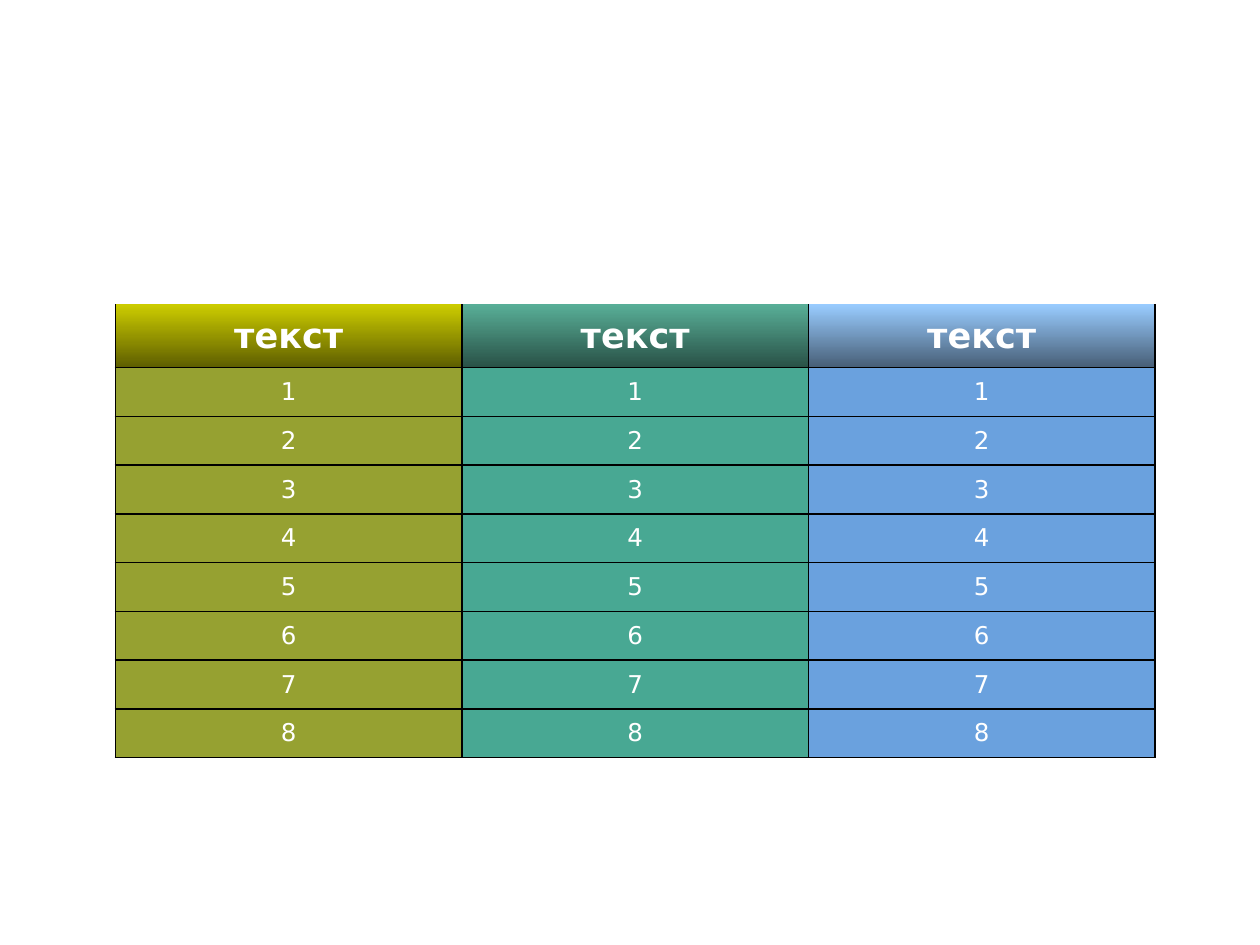
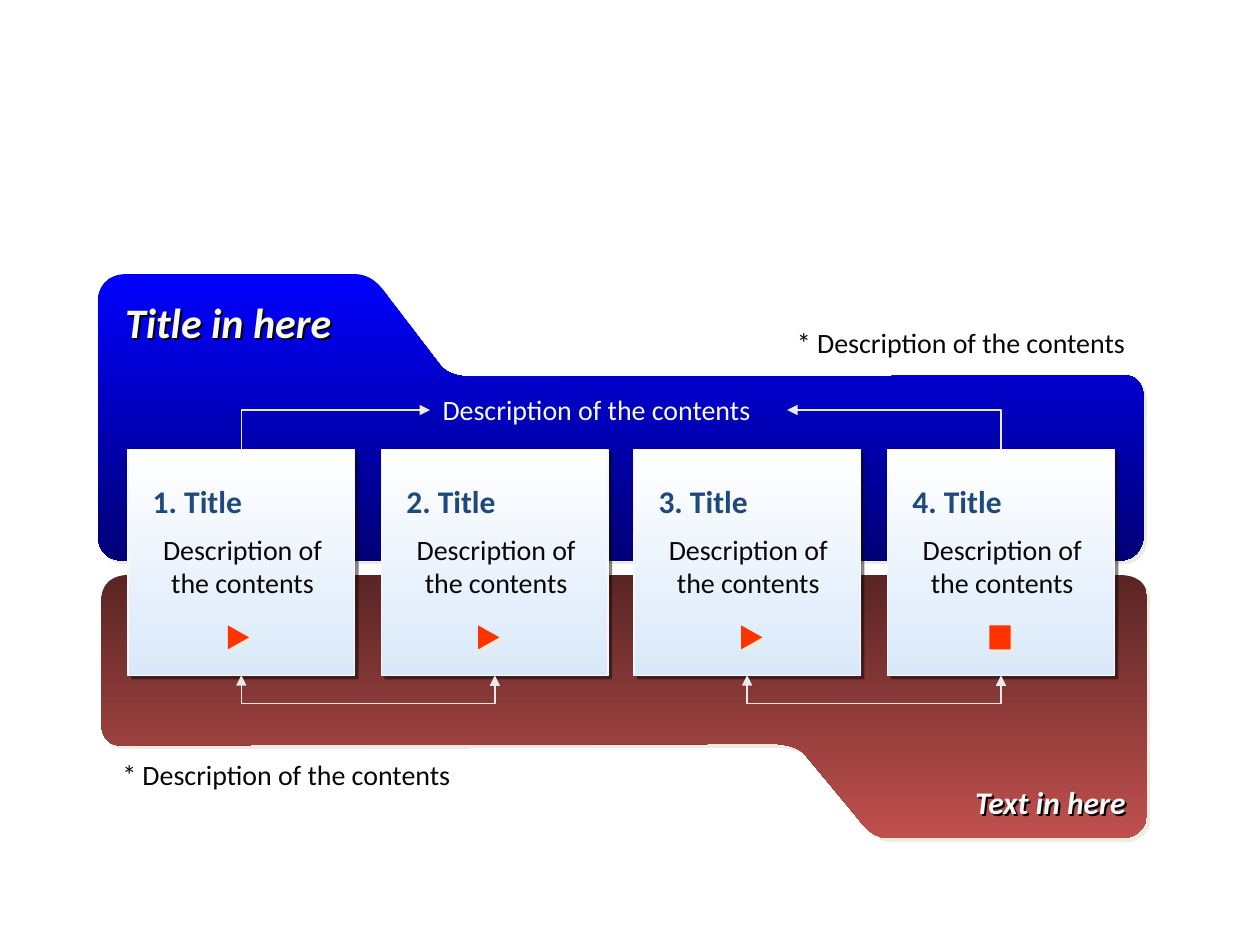
from dataclasses import dataclass

from lxml.etree import SubElement
from pptx import Presentation
from pptx.dml.color import RGBColor
from pptx.enum.shapes import MSO_CONNECTOR, MSO_SHAPE
from pptx.enum.text import MSO_ANCHOR, PP_ALIGN
from pptx.oxml.ns import qn
from pptx.util import Pt


@dataclass(frozen=True)
class Theme:
    table_font: str = "DejaVu Sans"
    text_font: str = "Calibri"
    white: str = "FFFFFF"
    black: str = "000000"
    ink: str = "080808"
    pale: str = "F8F8F8"
    heading: str = "1F497D"
    arrow: str = "EAEAEA"
    mark: str = "FF3300"
    glow: str = "EEECE1"
    card: tuple = ("FFFFFF", "DAE9FA")
    blue: tuple = ("0000FF", "000076")
    red: tuple = ("592524", "C0504D")
    # Header gradient and body fill of each table column
    columns: tuple = (
        (("CCCC00", "5E5E00"), "96A131"),
        (("58AE97", "295146"), "48A893"),
        (("99CCFF", "475E76"), "6AA1DE"),
    )
    header_size: int = 20
    cell_size: int = 14
    tab_size: int = 24
    heading_size: int = 18
    body_size: int = 16


THEME = Theme()

# Tab outline in points: a piece of one point is a line, of three a curve
TAB_WIDTH, TAB_HEIGHT = 599, 153.4
TAB_START = (11.5, 99.4)
TAB_OUTLINE = (
    ((386.6, 98.6),),
    ((393.1, 99.4), (398.2, 100.1), (402.5, 104.4)),
    ((430.6, 138.2),),
    ((435.6, 144), (440.6, 153.4), (453.6, 152.6)),
    ((582.5, 152.6),),
    ((593.3, 152.6), (599, 145.4), (598.3, 136.8)),
    ((598.3, 16.6),),
    ((599, 0.7), (582.5, 2.2), (582.5, 2.2)),
    ((17.3, 2.2),),
    ((17.3, 2.2), (0, 0), (0.7, 18.7)),
    ((0.7, 86.4),),
    ((0.7, 86.4), (0, 99.4), TAB_START),
)


# Shared formatting
def rgb(value):
    return RGBColor.from_string(value)


def paint(fill, colour):
    """Fill with one colour, or from top to bottom with a pair."""
    if isinstance(colour, str):
        fill.solid()
        fill.fore_color.rgb = rgb(colour)
        return
    fill.gradient()
    fill.gradient_angle = 270
    for stop, shade in zip(fill.gradient_stops, colour):
        stop.color.rgb = rgb(shade)


def add_shadow(shape, colour, opacity=100, distance=2.8):
    shape.shadow.inherit = False
    effects = shape._element.spPr.find(qn("a:effectLst"))
    shadow = SubElement(effects, qn("a:outerShdw"), dist=str(Pt(distance)),
                        dir="2700000", algn="ctr", rotWithShape="0")
    tint = SubElement(shadow, qn("a:srgbClr"), val=colour)
    SubElement(tint, qn("a:alpha"), val=str(opacity * 1000))


def style_shape(shape, colour, shadow, opacity=100, outline=None):
    paint(shape.fill, colour)
    if outline:
        shape.line.color.rgb = rgb(outline)
        shape.line.width = Pt(0.75)
    else:
        shape.line.fill.background()
    add_shadow(shape, shadow, opacity)


def style_span(span, font, size, colour, bold=False, italic=False):
    span.font.name = font
    span.font.size = Pt(size)
    span.font.bold = bold
    span.font.italic = italic
    span.font.color.rgb = rgb(colour)


def add_text(page, text, box, size, colour, align=PP_ALIGN.LEFT,
             bold=False, italic=False, shadow=False):
    shape = page.shapes.add_textbox(*map(Pt, box))
    frame = shape.text_frame
    frame.word_wrap = True
    frame.text = text
    para = frame.paragraphs[0]
    para.alignment = align
    style_span(para.runs[0], THEME.text_font, size, colour, bold, italic)
    if shadow:
        add_shadow(shape, THEME.black, distance=1.6)


# Table slide
def set_borders(cell, open_top):
    properties = cell._tc.get_or_add_tcPr()
    for side in ("lnL", "lnR", "lnT", "lnB"):
        line = SubElement(properties, qn(f"a:{side}"), w=str(Pt(1)))
        if side == "lnT" and open_top:
            SubElement(line, qn("a:noFill"))
        else:
            colour = SubElement(line, qn("a:solidFill"))
            SubElement(colour, qn("a:srgbClr"), val=THEME.black)


def fill_cell(cell, text, colour, is_header):
    set_borders(cell, open_top=is_header)
    paint(cell.fill, colour)
    cell.vertical_anchor = MSO_ANCHOR.MIDDLE
    cell.text_frame.text = text
    para = cell.text_frame.paragraphs[0]
    para.alignment = PP_ALIGN.CENTER
    size = THEME.header_size if is_header else THEME.cell_size
    style_span(para.runs[0], THEME.table_font, size, THEME.white, is_header)


def build_table(page, box, header_height=36.1):
    labels = ["текст"] + [str(number) for number in range(1, 9)]
    table = page.shapes.add_table(len(labels), len(THEME.columns), *map(Pt, box)).table
    row_height = (box[3] - header_height) / (len(labels) - 1)
    for index, label in enumerate(labels):
        is_header = index == 0
        table.rows[index].height = Pt(header_height if is_header else row_height)
        for column, (gradient, body) in enumerate(THEME.columns):
            fill_cell(table.cell(index, column), label,
                      gradient if is_header else body, is_header)
    for column in table.columns:
        column.width = Pt(box[2] / len(THEME.columns))


# Folder slide
def add_folder(page, box, colour, turned=False):
    """Draw the tabbed panel; turned puts the tab at the top left."""
    left, top, width, height = box

    def place(point):
        x, y = point[0] / TAB_WIDTH, point[1] / TAB_HEIGHT
        if turned:
            x, y = 1 - x, 1 - y
        return Pt(left + x * width), Pt(top + y * height)

    builder = page.shapes.build_freeform(*place(TAB_START))
    builder.add_line_segments([place(piece[-1]) for piece in TAB_OUTLINE], close=True)
    folder = builder.convert_to_shape()

    # Round the corners: turn their line segments into curves
    segments = list(folder._element.iter(qn("a:lnTo")))
    for segment, piece in zip(segments, TAB_OUTLINE):
        if len(piece) == 1:
            continue
        curve = SubElement(segment.getparent(), qn("a:cubicBezTo"))
        for x, y in map(place, piece):
            SubElement(curve, qn("a:pt"), x=str(x - folder.left), y=str(y - folder.top))
        segment.getparent().replace(segment, curve)
    style_shape(folder, colour, THEME.glow)


def add_card(page, box):
    card = page.shapes.add_shape(MSO_SHAPE.RECTANGLE, *map(Pt, box))
    style_shape(card, THEME.card, THEME.ink, 50, THEME.pale)


def add_card_content(page, box, number, mark, mark_offset):
    left, top, width, _ = box
    add_text(page, f"{number}. Title", (left + 7, top + 14.8, 71.3, 29),
             THEME.heading_size, THEME.heading, bold=True)
    add_text(page, "Description of the contents", (left + 0.7, top + 43.5, width, 46),
             THEME.body_size, THEME.ink, PP_ALIGN.CENTER)
    shape = page.shapes.add_shape(
        mark, Pt(left + mark_offset), Pt(top + 101.1), Pt(13.7), Pt(12.2))
    shape.rotation = 90
    style_shape(shape, THEME.mark, THEME.glow)


def add_bent_arrow(page, start, end, preset, turn, flip, bend=None, both=False):
    """Draw a quarter-turned elbow, which swaps the sides of its frame."""
    width = max(abs(end[1] - start[1]), 0.12)
    height = abs(end[0] - start[0])
    left = (start[0] + end[0] - width) / 2
    top = (start[1] + end[1] - height) / 2
    arrow = page.shapes.add_connector(
        MSO_CONNECTOR.ELBOW, Pt(left), Pt(top), Pt(left + width), Pt(top + height))
    arrow.line.color.rgb = rgb(THEME.arrow)
    arrow.line.width = Pt(0.75)
    properties = arrow._element.spPr
    frame = properties.find(qn("a:xfrm"))
    frame.set("rot", str(turn * 60000))
    if flip:
        frame.set("flipH", "1")
    geometry = properties.find(qn("a:prstGeom"))
    geometry.set("prst", preset)
    if bend:
        SubElement(geometry.find(qn("a:avLst")), qn("a:gd"), name="adj1",
                   fmla=f"val {round(bend / width * 100000)}")
    line = properties.find(qn("a:ln"))
    for tip in ("headEnd", "tailEnd") if both else ("tailEnd",):
        SubElement(line, qn(f"a:{tip}"), type="triangle")
    SubElement(properties, qn("a:effectLst"))


def add_arrows(page, cards):
    centres = [left + width / 2 for left, _, width, _ in cards]
    top = cards[0][1]
    bottom = top + cards[0][3]
    # From the outer cards to the caption
    add_bent_arrow(page, (centres[0], top), (245.7, top - 22.7),
                   "bentConnector2", 270, False)
    add_bent_arrow(page, (centres[-1], top), (449.8, top - 22.7),
                   "bentConnector2", 90, True)
    # Loops below each pair of cards
    for first, second in (centres[:2], centres[2:]):
        add_bent_arrow(page, (first, bottom), (second, bottom),
                       "bentConnector3", 270, True, bend=17, both=True)


def build_folders(page, box):
    left, top, width, _ = box
    add_folder(page, (left, top, width, 167), THEME.blue, turned=True)
    add_folder(page, (left + 1.8, top + 170.7, width, TAB_HEIGHT), THEME.red)

    # Cards across both folders
    cards = [(left + offset, top + 101.2, 129.4, 128.9)
             for offset in (17.8, 162.7, 306.8, 451.9)]
    for card in cards:
        add_card(page, card)
    add_arrows(page, cards)
    triangle, square = MSO_SHAPE.ISOSCELES_TRIANGLE, MSO_SHAPE.RECTANGLE
    marks = ((triangle, 56.2), (triangle, 54.3), (triangle, 60.5), (square, 57.3))
    for number, (card, mark) in enumerate(zip(cards, marks), 1):
        add_card_content(page, card, number, *mark)

    # Folder titles and captions
    add_text(page, "Title in here", (left + 9, top + 10, 170, 36),
             THEME.tab_size, THEME.pale, bold=True, italic=True, shadow=True)
    add_text(page, "Text in here", (left + 420, top + 287.9, 175, 29),
             THEME.heading_size, THEME.pale, PP_ALIGN.RIGHT, True, True, True)
    caption = "Description of the contents"
    add_text(page, caption, (left + 190.4, top + 65.2, 204, 26.6),
             THEME.body_size, THEME.pale)
    add_text(page, f"* {caption}", (left + 380, top + 26.6, 214.6, 26.6),
             THEME.body_size, THEME.ink, PP_ALIGN.RIGHT)
    add_text(page, f"* {caption}", (left + 7.4, top + 273.5, 214.6, 26.6),
             THEME.body_size, THEME.ink)


def main():
    deck = Presentation()
    deck.slide_width, deck.slide_height = Pt(720), Pt(540)
    blank = deck.slide_layouts[6]
    build_table(deck.slides.add_slide(blank), (66, 174, 594, 259.2))
    build_folders(deck.slides.add_slide(blank), (55.4, 155.8, 599, 324))
    deck.save("out.pptx")


if __name__ == "__main__":
    main()
